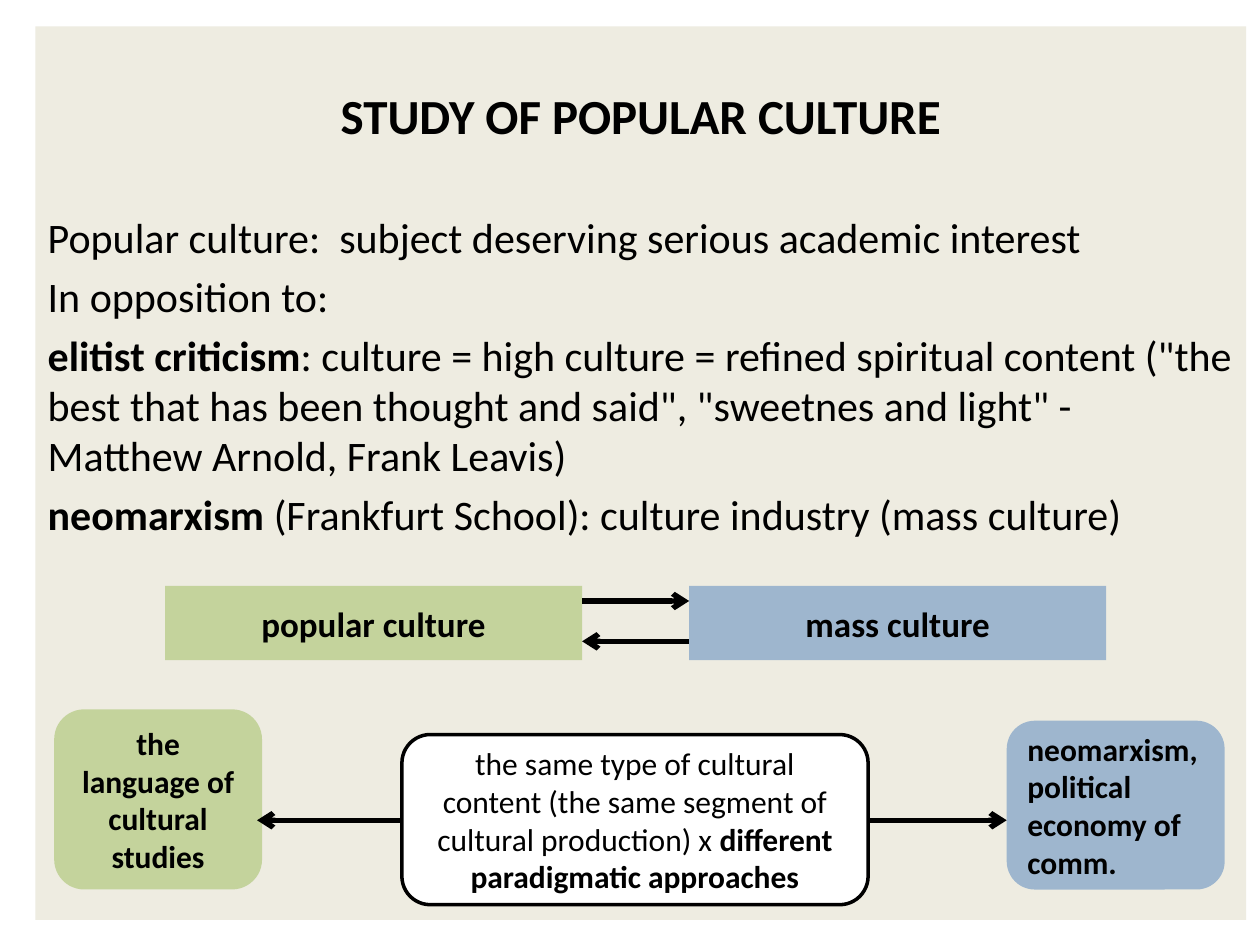
from lxml import etree
from pptx import Presentation
from pptx.dml.color import RGBColor
from pptx.enum.shapes import MSO_CONNECTOR, MSO_SHAPE
from pptx.enum.text import MSO_ANCHOR, PP_ALIGN
from pptx.oxml.ns import qn
from pptx.util import Inches, Pt

RECTANGLE = MSO_SHAPE.RECTANGLE
ROUNDED = MSO_SHAPE.ROUNDED_RECTANGLE
STRAIGHT = MSO_CONNECTOR.STRAIGHT
MIDDLE = MSO_ANCHOR.MIDDLE
LEFT, CENTER = PP_ALIGN.LEFT, PP_ALIGN.CENTER

BLACK = RGBColor(0x00, 0x00, 0x00)
WHITE = RGBColor(0xFF, 0xFF, 0xFF)
CREAM = RGBColor(0xEE, 0xEC, 0xE1)
GREEN = RGBColor(0x9B, 0xBB, 0x59)
BLUE = RGBColor(0x4F, 0x81, 0xBD)

# Each paragraph is a list of (text, bold) runs
BODY = [
    [("Popular culture:  subject deserving serious academic interest", False)],
    [("In opposition to:", False)],
    [("elitist criticism", True),
     (': culture = high culture = refined spiritual content ("the best that has '
      'been thought and said", "sweetnes and light" - Matthew Arnold, Frank Leavis)',
      False)],
    [("neomarxism ", True),
     ("(Frankfurt School): culture industry (mass culture)", False)],
]


class SlideBuilder:
    font = "Calibri"

    def __init__(self, presentation):
        self.slide = presentation.slides.add_slide(presentation.slide_layouts[5])

    def fill_text(self, text_frame, paragraphs, size, align, space_after=0):
        text_frame.word_wrap = True
        for index, runs in enumerate(paragraphs):
            paragraph = text_frame.paragraphs[0] if index == 0 else text_frame.add_paragraph()
            paragraph.alignment = align
            paragraph.space_after = Pt(space_after)
            for text, bold in runs:
                run = paragraph.add_run()
                run.text = text
                run.font.name = self.font
                run.font.size = Pt(size)
                run.font.bold = bold
                run.font.color.rgb = BLACK

    def title(self, text, left, top, width, height):
        title = self.slide.shapes.title
        title.left, title.top = Inches(left), Inches(top)
        title.width, title.height = Inches(width), Inches(height)
        title.text_frame.vertical_anchor = MIDDLE
        self.fill_text(title.text_frame, [[(text, True)]], 28, CENTER)

    def text(self, paragraphs, left, top, width, height):
        box = self.slide.shapes.add_textbox(
            Inches(left), Inches(top), Inches(width), Inches(height))
        self.fill_text(box.text_frame, paragraphs, 24, LEFT, space_after=4.8)

    def box(self, kind, left, top, width, height, fill, paragraphs=(),
            size=18, align=CENTER, alpha=None, outline=None):
        shape = self.slide.shapes.add_shape(
            kind, Inches(left), Inches(top), Inches(width), Inches(height))
        shape.shadow.inherit = False
        shape.fill.solid()
        shape.fill.fore_color.rgb = fill
        if alpha is not None:
            color = shape.element.spPr.find(qn("a:solidFill"))[0]
            etree.SubElement(color, qn("a:alpha"), val=str(alpha * 1000))
        if outline is None:
            shape.line.fill.background()
        else:
            shape.line.color.rgb = BLACK
            shape.line.width = Pt(outline)
        shape.text_frame.vertical_anchor = MIDDLE
        self.fill_text(shape.text_frame, paragraphs, size, align)
        return shape

    def panel(self, left, top, width, height):
        panel = self.box(RECTANGLE, left, top, width, height, CREAM)
        self.slide.shapes.title.element.addprevious(panel.element)

    def arrow(self, start, end, y):
        connector = self.slide.shapes.add_connector(
            STRAIGHT, Inches(start), Inches(y), Inches(end), Inches(y))
        connector.line.color.rgb = BLACK
        connector.line.width = Pt(3)
        properties = connector.element.spPr
        etree.SubElement(properties.find(qn("a:ln")), qn("a:tailEnd"), type="arrow")
        etree.SubElement(properties, qn("a:effectLst"))


def main():
    presentation = Presentation()
    presentation.slide_width, presentation.slide_height = Inches(10), Inches(7.5)
    builder = SlideBuilder(presentation)

    # Background panel, title and body text
    builder.panel(0.28, 0.21, 9.61, 7.09)
    builder.title("STUDY OF POPULAR CULTURE", 0.28, 0.56, 9.61, 0.7)
    builder.text(BODY, 0.28, 1.63, 9.61, 2.8)

    # Popular and mass culture, linked both ways
    for left, fill, label in ((1.31, GREEN, "popular culture"), (5.47, BLUE, "mass culture")):
        builder.box(RECTANGLE, left, 4.65, 3.31, 0.59, fill, [[(label, True)]],
                    size=20, alpha=50)
    builder.arrow(4.62, 5.47, 4.77)
    builder.arrow(5.47, 4.62, 5.09)

    # The two paradigms
    builder.box(ROUNDED, 0.43, 5.63, 1.65, 1.43, GREEN,
                [[("the language of cultural studies", True)]], alpha=50)
    builder.box(ROUNDED, 7.99, 5.72, 1.73, 1.34, BLUE,
                [[("neomarxism,", True)], [("political economy of comm.", True)]],
                align=LEFT, alpha=50)

    # Shared content pointing to both paradigms
    builder.arrow(3.19, 2.04, 6.51)
    builder.arrow(6.89, 7.99, 6.51)
    builder.box(ROUNDED, 3.19, 5.83, 3.7, 1.35, WHITE,
                [[("the same type of cultural content (the same segment of "
                   "cultural production) x ", False),
                  ("different paradigmatic approaches", True)]], outline=2)

    presentation.save("out.pptx")


if __name__ == "__main__":
    main()
